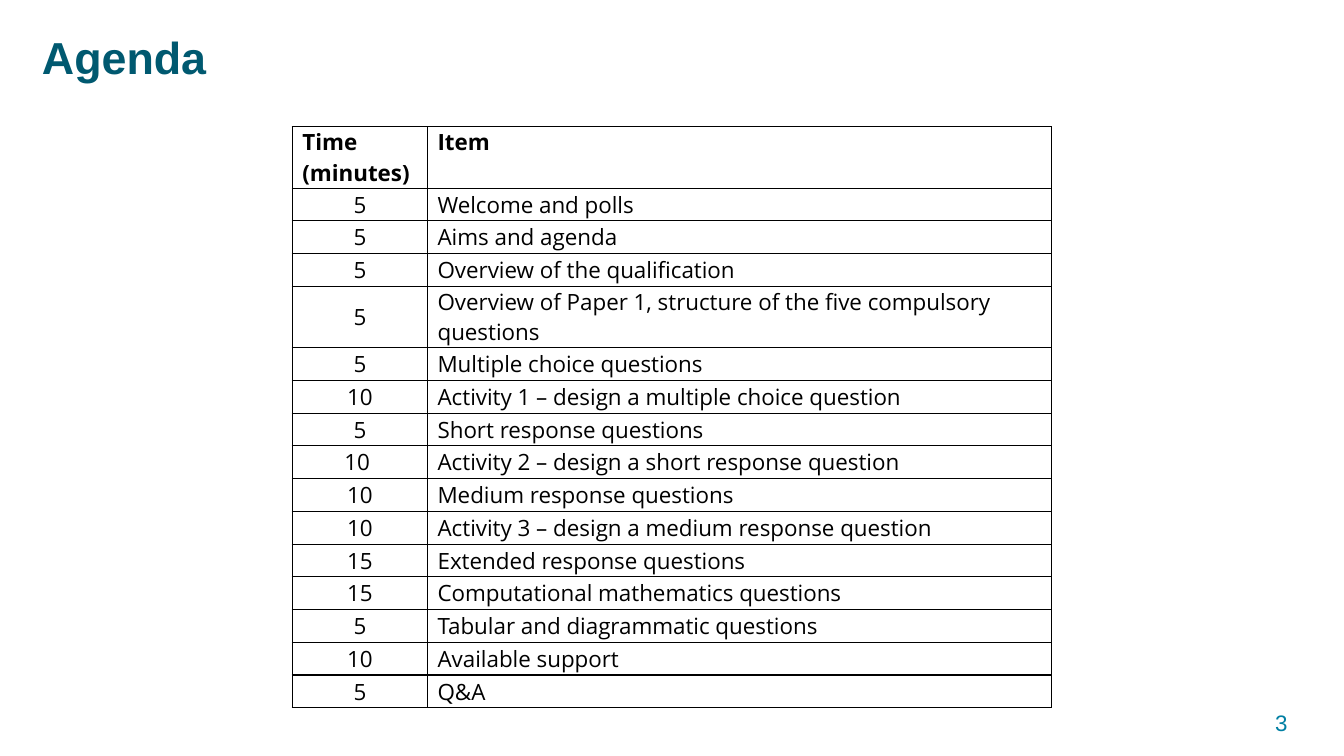
"""Build the agenda slide with its timetable."""
from dataclasses import dataclass

import pptx
import pptx.dml.color
import pptx.enum.text
import pptx.oxml
import pptx.oxml.ns
import pptx.util

ALIGN = pptx.enum.text.PP_ALIGN
ANCHOR = pptx.enum.text.MSO_ANCHOR


@dataclass(frozen=True)
class Theme:
    heading_font: str = "Arial"
    table_font: str = "Open Sans"
    heading: str = "005970"
    number: str = "007FA3"
    ink: str = "000000"
    heading_size: int = 32
    body_size: int = 16
    border_width: int = 1


class AgendaSlide:
    EMU_PER_PX = 7620

    def __init__(self, deck, theme):
        self.theme = theme
        deck.slide_width, deck.slide_height = self.px(1600), self.px(900)
        self.slide = deck.slides.add_slide(deck.slide_layouts[6])

    def px(self, length):
        return pptx.util.Emu(length * self.EMU_PER_PX)

    def style(self, paragraph, font, size, colour, bold=False, align=ALIGN.LEFT):
        paragraph.alignment = align
        for run in paragraph.runs:
            run.font.name = font
            run.font.size = pptx.util.Pt(size)
            run.font.bold = bold
            run.font.color.rgb = pptx.dml.color.RGBColor.from_string(colour)

    def text(self, words, box, size, colour, inset=(0, 0), spacing=1.0, **look):
        frame = self.slide.shapes.add_textbox(*map(self.px, box)).text_frame
        frame.word_wrap = True
        frame.margin_left = frame.margin_right = self.px(inset[0])
        frame.margin_top = frame.margin_bottom = self.px(inset[1])
        frame.text = words
        frame.paragraphs[0].line_spacing = spacing
        self.style(frame.paragraphs[0], self.theme.heading_font, size, colour, **look)

    def border(self, cell):
        properties = cell._tc.get_or_add_tcPr()
        width = pptx.util.Pt(self.theme.border_width)
        for index, side in enumerate(("lnL", "lnR", "lnT", "lnB")):
            properties.insert(index, pptx.oxml.parse_xml(
                f'<a:{side} {pptx.oxml.ns.nsdecls("a")} w="{width}"><a:solidFill>'
                f'<a:srgbClr val="{self.theme.ink}"/></a:solidFill></a:{side}>'))

    def cell(self, cell, words, header, centred):
        cell.text = words
        cell.margin_left = cell.margin_right = self.px(12)
        cell.margin_top = cell.margin_bottom = 0
        cell.vertical_anchor = ANCHOR.TOP if header else ANCHOR.MIDDLE
        cell.fill.background()
        self.border(cell)
        self.style(cell.text_frame.paragraphs[0], self.theme.table_font,
                   self.theme.body_size, self.theme.ink, bold=header,
                   align=ALIGN.CENTER if centred else ALIGN.LEFT)

    def table(self, left, top, widths, heights, rows):
        timetable = self.slide.shapes.add_table(
            len(rows), len(widths), self.px(left), self.px(top),
            self.px(sum(widths)), self.px(sum(heights))).table
        timetable.first_row = True
        timetable.horz_banding = False
        for column, width in zip(timetable.columns, widths):
            column.width = self.px(width)
        for r, (height, entries) in enumerate(zip(heights, rows)):
            timetable.rows[r].height = self.px(height)
            for c, words in enumerate(entries):
                self.cell(timetable.cell(r, c), words, r == 0, r > 0 and c == 0)


AGENDA = [
    ("Time (minutes)", "Item"),
    ("5", "Welcome and polls"),
    ("5", "Aims and agenda"),
    ("5", "Overview of the qualification"),
    ("5", "Overview of Paper 1, structure of the five compulsory questions"),
    ("5", "Multiple choice questions"),
    ("10", "Activity 1 – design a multiple choice question"),
    ("5", "Short response questions"),
    ("10 ", "Activity 2 – design a short response question"),
    ("10", "Medium response questions"),
    ("10", "Activity 3 – design a medium response question"),
    ("15", "Extended response questions"),
    ("15", "Computational mathematics questions"),
    ("5", "Tabular and diagrammatic questions"),
    ("10", "Available support"),
    ("5", "Q&A"),
]
TWO_LINE_ROWS = (0, 4)


def main():
    deck = pptx.Presentation()
    theme = Theme()
    agenda = AgendaSlide(deck, theme)
    agenda.text("3", (1483, 836, 85, 48), theme.body_size, theme.number,
                inset=(16, 8), align=ALIGN.CENTER)
    agenda.text("Agenda", (50, 42, 1380, 174), theme.heading_size, theme.heading,
                spacing=0.9, bold=True)
    heights = [73 if row in TWO_LINE_ROWS else 39 for row in range(len(AGENDA))]
    agenda.table(348, 151, (161, 743), heights, AGENDA)
    deck.save("out.pptx")


if __name__ == "__main__":
    main()
